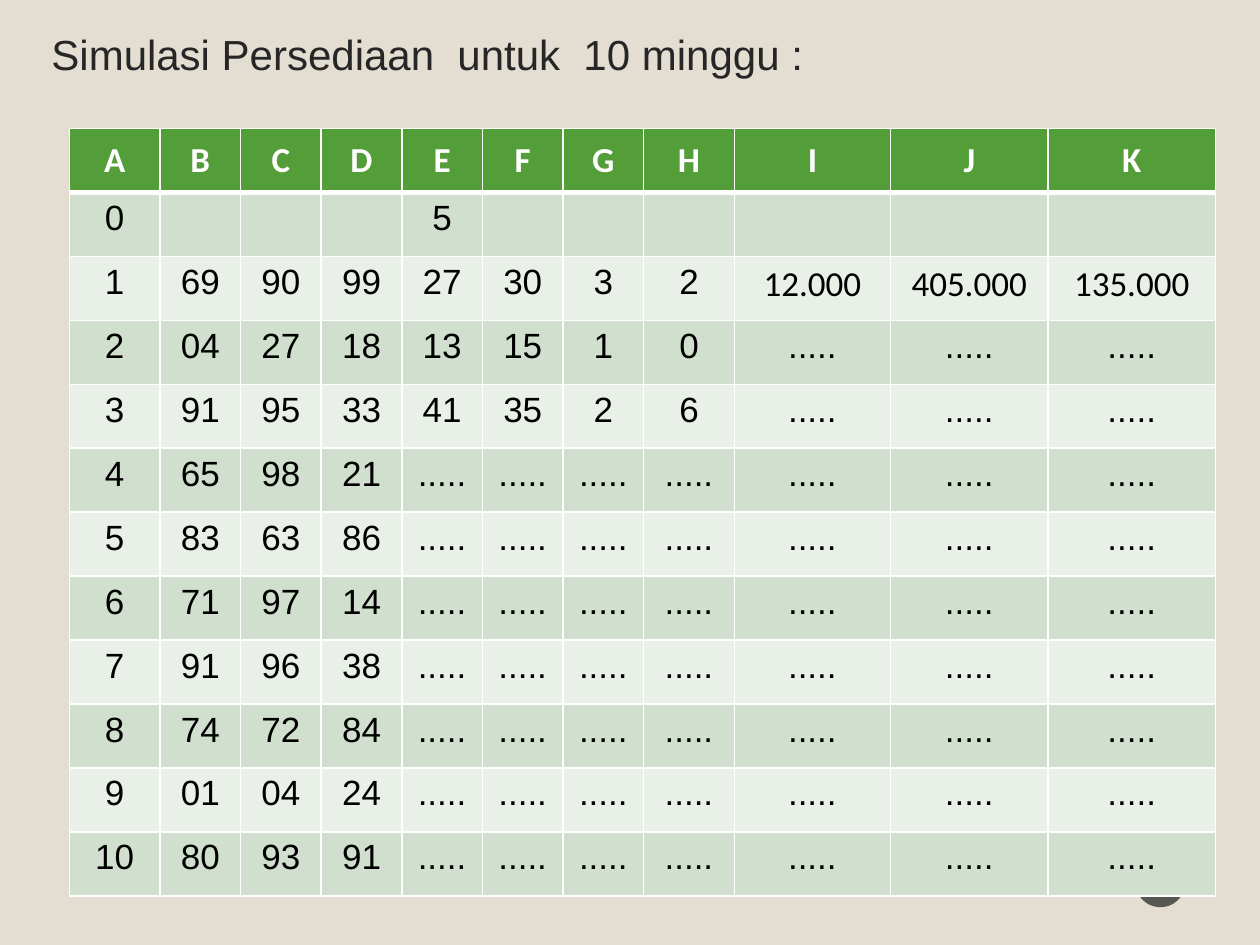
from dataclasses import dataclass

from lxml.etree import SubElement
from pptx import Presentation
from pptx.dml.color import RGBColor as Rgb
from pptx.enum.shapes import MSO_SHAPE as Shape
from pptx.enum.text import MSO_ANCHOR as Anchor, PP_ALIGN as Align
from pptx.oxml.ns import qn
from pptx.util import Inches, Pt


@dataclass(frozen=True)
class Theme:
    back: str = "E3DED1"
    title: str = "262626"
    badge: str = "1D1D1D"
    head: str = "549E39"
    bands: tuple = ("D1DFCE", "E9F0E8")
    white: str = "FFFFFF"
    black: str = "000000"
    font: str = "Arial"
    alt: str = "Calibri"
    title_size: int = 24
    cell_size: int = 20


THEME = Theme()
DOTS = "....."
HEADS = list("ABCDEFGHIJK")
WIDTHS = [0.72] + [0.64] * 6 + [0.72, 1.24, 1.25, 1.33]
WEEKS = [
    ["0", "", "", "", "5"] + [""] * 6,
    ["1", "69", "90", "99", "27", "30", "3", "2", "12.000", "405.000", "135.000"],
    ["2", "04", "27", "18", "13", "15", "1", "0"],
    ["3", "91", "95", "33", "41", "35", "2", "6"],
    ["4", "65", "98", "21"],
    ["5", "83", "63", "86"],
    ["6", "71", "97", "14"],
    ["7", "91", "96", "38"],
    ["8", "74", "72", "84"],
    ["9", "01", "04", "24"],
    ["10", "80", "93", "91"],
]


def paint(fill, color):
    fill.solid()
    fill.fore_color.rgb = Rgb.from_string(color)


def write(frame, text, size=THEME.cell_size, color=THEME.black,
          font=THEME.font, bold=False, align=Align.CENTER):
    para = frame.paragraphs[0]
    para.alignment = align
    run = para.add_run()
    run.text = text
    run.font.size = Pt(size)
    run.font.name = font
    run.font.bold = bold
    run.font.color.rgb = Rgb.from_string(color)


def add_title(slide, text):
    box = slide.shapes.add_textbox(Inches(0.31), Inches(0.16), Inches(9.69), Inches(0.53))
    frame = box.text_frame
    frame.word_wrap = True
    frame.vertical_anchor = Anchor.MIDDLE
    write(frame, text, size=THEME.title_size, color=THEME.title, align=Align.LEFT)


def add_badge(slide):
    """Add the see-through disc that the table partly covers."""
    disc = slide.shapes.add_shape(
        Shape.OVAL, Inches(9.01), Inches(6.8), Inches(0.4), Inches(0.4))
    disc.shadow.inherit = False
    disc.line.fill.background()
    paint(disc.fill, THEME.badge)
    color = disc.fill._xPr.find(qn("a:solidFill"))[0]
    SubElement(color, qn("a:alpha"), val="70000")


def set_edges(cell, top, bottom):
    """Draw white cell borders; widths are in points."""
    props = cell._tc.get_or_add_tcPr()
    for side, width in (("L", 1), ("R", 1), ("T", top), ("B", bottom)):
        line = SubElement(props, qn(f"a:ln{side}"), w=str(Pt(width)))
        fill = SubElement(line, qn("a:solidFill"))
        SubElement(fill, qn("a:srgbClr"), val=THEME.white)


def add_grid(slide, heads, weeks):
    rows = [heads] + [week + [DOTS] * (len(heads) - len(week)) for week in weeks]
    high = Inches(6.09 / len(rows))
    table = slide.shapes.add_table(
        len(rows), len(heads), Inches(0.55), Inches(1.02),
        Inches(sum(WIDTHS)), high * len(rows)).table
    for col, width in zip(table.columns, WIDTHS):
        col.width = Inches(width)
    for r, row in enumerate(rows):
        table.rows[r].height = high
        for c, text in enumerate(row):
            cell = table.cell(r, c)
            set_edges(cell, top=3 if r == 1 else 1, bottom=3 if r == 0 else 1)
            paint(cell.fill, THEME.bands[(r - 1) % 2] if r else THEME.head)
            if r == 0:
                cell.vertical_anchor = Anchor.MIDDLE
                write(cell.text_frame, text, color=THEME.white, font=THEME.alt, bold=True)
            elif text:
                write(cell.text_frame, text, font=THEME.alt if "000" in text else THEME.font)


def main():
    deck = Presentation()
    deck.slide_width, deck.slide_height = Inches(10), Inches(7.5)
    slide = deck.slides.add_slide(deck.slide_layouts[6])
    paint(slide.background.fill, THEME.back)
    add_title(slide, "Simulasi Persediaan  untuk  10 minggu :")
    add_badge(slide)
    add_grid(slide, HEADS, WEEKS)
    deck.save("out.pptx")


if __name__ == "__main__":
    main()
